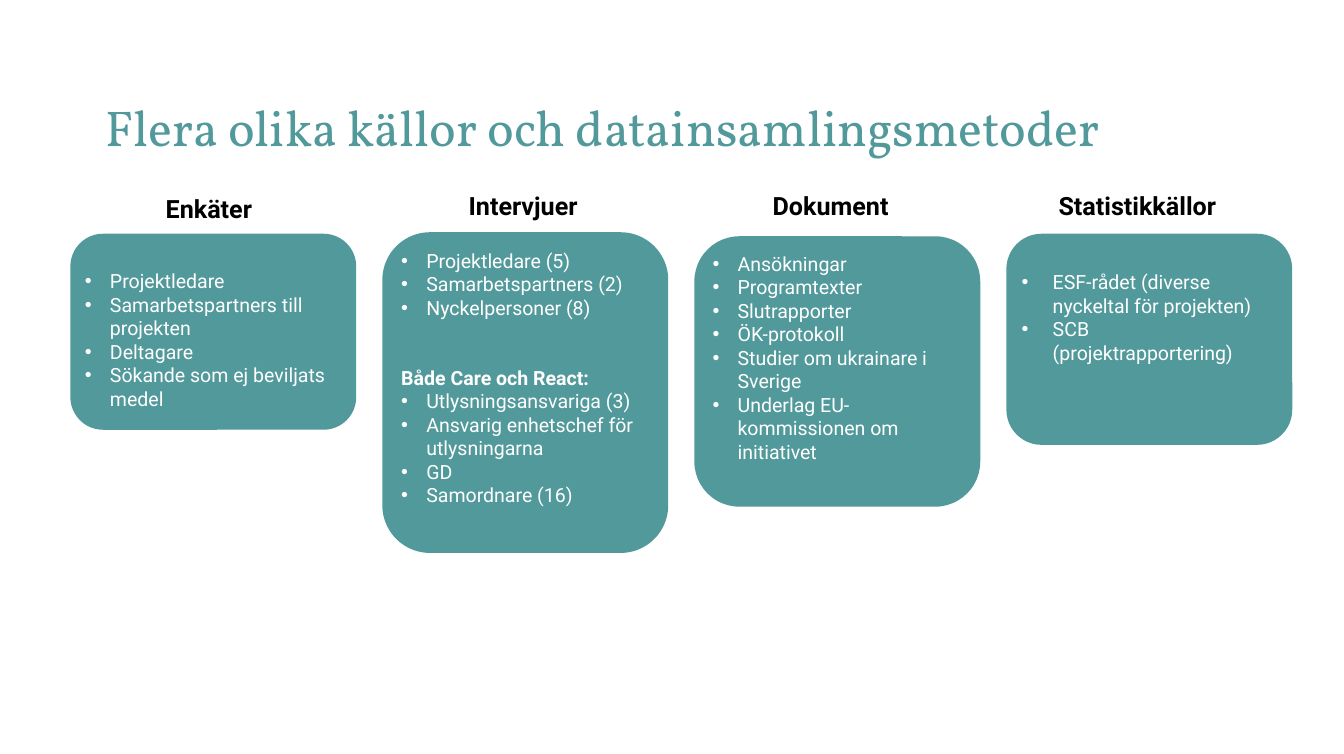
from lxml import etree
from pptx import Presentation
from pptx.dml.color import RGBColor
from pptx.enum.shapes import MSO_SHAPE
from pptx.enum.text import MSO_ANCHOR, MSO_AUTO_SIZE, PP_ALIGN
from pptx.oxml.ns import qn
from pptx.util import Inches, Pt

ROUNDED = MSO_SHAPE.ROUNDED_RECTANGLE
TOP = MSO_ANCHOR.TOP
LEFT = PP_ALIGN.LEFT
NO_AUTOFIT = MSO_AUTO_SIZE.NONE
FIT_SHAPE = MSO_AUTO_SIZE.SHAPE_TO_FIT_TEXT

TEAL = RGBColor(0x52, 0x99, 0x9B)
BLACK = RGBColor(0, 0, 0)
WHITE = RGBColor(255, 255, 255)

TITLE_FORMAT = {"name": "Vollkorn", "size": Pt(72), "bold": False}
HEADING_FORMAT = {"name": "Roboto", "size": Pt(36), "bold": True}
ITEM_FORMAT = {"name": "Roboto", "size": Pt(28), "bold": False}
SUBHEADING_FORMAT = {**ITEM_FORMAT, "bold": True}

CARD_LEFT, CARD_STEP, CARD_WIDTH = 1.4, 6.21, 5.69
SUBHEADING = "Både Care och React:"
SUBHEADING_GAP = Pt(67)

SOURCES = [
    {"heading": "Enkäter", "heading_box": (3.2, 3.8, 2.1, 0.71),
     "top": 4.65, "height": 3.9, "inset": 0.52, "indent": 0.5,
     "items": ["Projektledare", "Samarbetspartners till projekten",
               "Deltagare", "Sökande som ej beviljats medel"]},
    {"heading": "Intervjuer", "heading_box": (9.23, 3.73, 2.61, 0.71),
     "top": 4.62, "height": 6.38, "inset": 0.05, "indent": 0.5,
     "items": ["Projektledare (5)", "Samarbetspartners (2)",
               "Nyckelpersoner (8)", SUBHEADING, "Utlysningsansvariga (3)",
               "Ansvarig enhetschef för utlysningarna", "GD",
               "Samordnare (16)"]},
    {"heading": "Dokument", "heading_box": (15.28, 3.73, 2.79, 0.71),
     "top": 4.7, "height": 5.38, "inset": 0.05, "indent": 0.5,
     "items": ["Ansökningar", "Programtexter", "Slutrapporter",
               "ÖK-protokoll", "Studier om ukrainare i Sverige",
               "Underlag EU-kommissionen om initiativet"]},
    {"heading": "Statistikkällor", "heading_box": (20.97, 3.73, 3.85, 0.71),
     "top": 4.65, "height": 4.2, "inset": 0.52, "indent": 0.62,
     "items": ["ESF-rådet (diverse nyckeltal för projekten)",
               "SCB\v(projektrapportering)"]},
]


def format_paragraph(paragraph, values, color):
    paragraph.alignment = LEFT
    for name, value in values.items():
        setattr(paragraph.font, name, value)
    paragraph.font.color.rgb = color


def add_bullet(paragraph, indent):
    properties = paragraph._p.get_or_add_pPr()
    properties.set("marL", str(Inches(indent)))
    properties.set("indent", str(-Inches(indent)))
    etree.SubElement(properties, qn("a:buFont")).set("typeface", "Arial")
    etree.SubElement(properties, qn("a:buChar")).set("char", "•")


def set_title(slide, text):
    title = slide.shapes.title
    title.left, title.top = Inches(2.1), Inches(2.06)
    title.width, title.height = Inches(23.64), Inches(2.59)
    frame = title.text_frame
    frame.text = text
    frame_values = {"auto_size": NO_AUTOFIT, "vertical_anchor": TOP,
                    "word_wrap": True, "margin_left": 0, "margin_top": 0,
                    "margin_right": 0, "margin_bottom": 0}
    for name, value in frame_values.items():
        setattr(frame, name, value)
    paragraph = frame.paragraphs[0]
    paragraph.line_spacing = 0.9
    format_paragraph(paragraph, TITLE_FORMAT, TEAL)


def add_heading(slide, text, box):
    shape = slide.shapes.add_textbox(*map(Inches, box))
    frame = shape.text_frame
    frame.text = text
    frame.word_wrap = False
    frame.auto_size = FIT_SHAPE
    format_paragraph(frame.paragraphs[0], HEADING_FORMAT, BLACK)


def add_card(slide, left, source):
    shape = slide.shapes.add_shape(
        ROUNDED, Inches(left), Inches(source["top"]),
        Inches(CARD_WIDTH), Inches(source["height"]))
    shape.shadow.inherit = False
    shape.fill.solid()
    shape.fill.fore_color.rgb = TEAL
    shape.line.fill.background()
    frame = shape.text_frame
    frame.word_wrap = True
    frame.vertical_anchor = TOP
    frame.margin_top = Inches(source["inset"])
    frame.text = "\n".join(source["items"])
    for paragraph, item in zip(frame.paragraphs, source["items"]):
        if item == SUBHEADING:
            paragraph.space_before = SUBHEADING_GAP
            format_paragraph(paragraph, SUBHEADING_FORMAT, WHITE)
        else:
            add_bullet(paragraph, source["indent"])
            format_paragraph(paragraph, ITEM_FORMAT, WHITE)


def main():
    presentation = Presentation()
    presentation.slide_width = Inches(26.75)
    presentation.slide_height = Inches(15)
    slide = presentation.slides.add_slide(presentation.slide_layouts[5])
    set_title(slide, "Flera olika källor och datainsamlingsmetoder")
    for index, source in enumerate(SOURCES):
        add_heading(slide, source["heading"], source["heading_box"])
        add_card(slide, CARD_LEFT + index * CARD_STEP, source)
    presentation.save("out.pptx")


if __name__ == "__main__":
    main()
